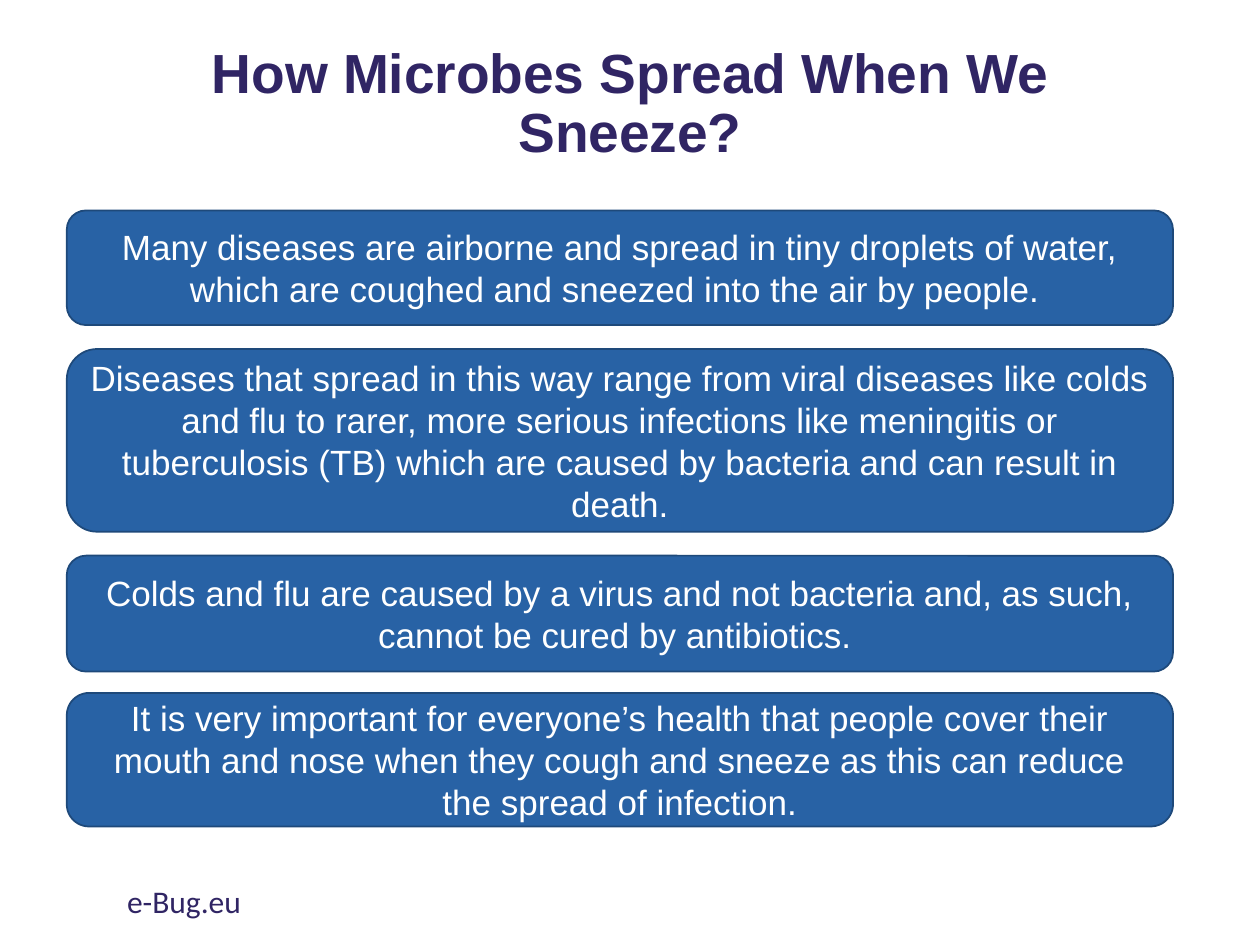
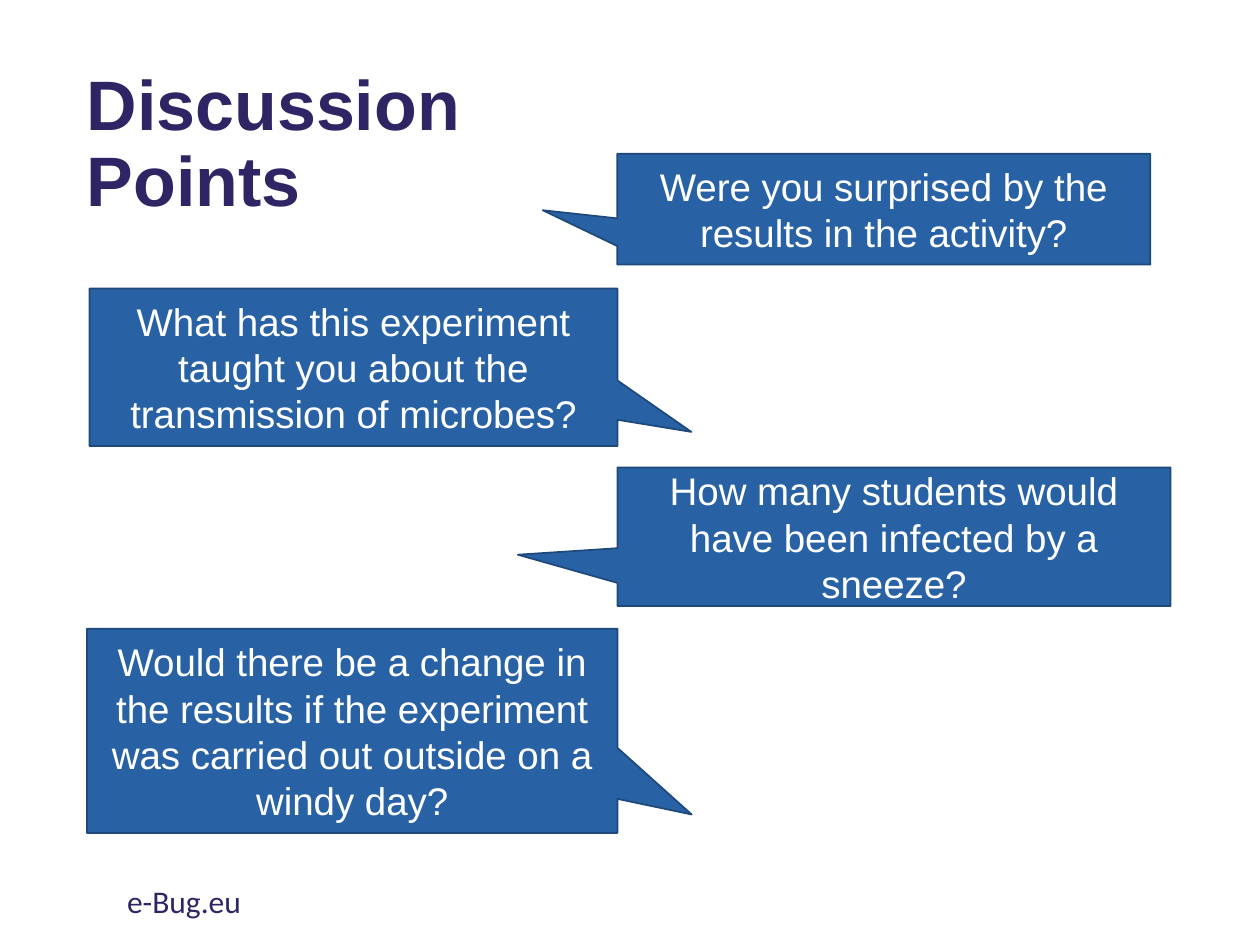
from pptx import Presentation
from pptx.dml.color import RGBColor
from pptx.enum import shapes, text
from pptx.util import Inches, Pt

NAVY = RGBColor(0x30, 0x25, 0x64)
BLUE = RGBColor(0x28, 0x62, 0xA5)
EDGE = RGBColor(0x1E, 0x49, 0x7A)
WHITE = RGBColor(0xFF, 0xFF, 0xFF)

LEFT, CENTER = text.PP_ALIGN.LEFT, text.PP_ALIGN.CENTER
TOP, MIDDLE = text.MSO_ANCHOR.TOP, text.MSO_ANCHOR.MIDDLE

TITLE = dict(name="Arial", bold=True, color=NAVY)
BODY = dict(name="Arial", color=WHITE)
FOOTER = dict(name="Calibri", size=Pt(18), color=NAVY)


def write(sp, words, font, align=CENTER, anchor=MIDDLE, spacing=1.0):
    tf = sp.text_frame
    tf.word_wrap = True
    tf.vertical_anchor = anchor
    p = tf.paragraphs[0]
    p.alignment = align
    p.line_spacing = spacing
    r = p.add_run()
    r.text = words
    for key, value in font.items():
        if key == "color":
            r.font.color.rgb = value
        else:
            setattr(r.font, key, value)


def add_panel(s, kind, box, words, size):
    """Add a blue outlined shape with centred white text."""
    sp = s.shapes.add_shape(kind, *map(Inches, box))
    sp.shadow.inherit = False
    sp.fill.solid()
    sp.fill.fore_color.rgb = BLUE
    sp.line.color.rgb = EDGE
    sp.line.width = Pt(1)
    write(sp, words, BODY | dict(size=Pt(size)))
    return sp


prs = Presentation()
prs.slide_width, prs.slide_height = Inches(10), Inches(7.5)

# Titles and footers
titles = [
    ("How Microbes Spread When We Sneeze?", (0.69, 0.38, 8.62, 0.91), 31.5, CENTER),
    ("Discussion Points", (0.59, 0.43, 4.23, 1.45), 40, LEFT),
]
slides = []
for words, box, size, align in titles:
    s = prs.slides.add_slide(prs.slide_layouts[6])
    title = s.shapes.add_textbox(*map(Inches, box))
    write(title, words, TITLE | dict(size=Pt(size)), align, spacing=0.9)
    footer = s.shapes.add_textbox(Inches(0.91), Inches(6.95), Inches(3.38), Inches(0.4))
    write(footer, "e-Bug.eu", FOOTER, LEFT, TOP)
    slides.append(s)
sneeze, discussion = slides

# Facts: top, height, words
facts = [
    (1.67, 0.91, "Many diseases are airborne and spread in tiny droplets of water, "
                 "which are coughed and sneezed into the air by people. "),
    (2.77, 1.45, "Diseases that spread in this way range from viral diseases like colds "
                 "and flu to rarer, more serious infections like meningitis or "
                 "tuberculosis (TB) which are caused by bacteria and can result in death."),
    (4.41, 0.92, "Colds and flu are caused by a virus and not bacteria and, as such, "
                 "cannot be cured by antibiotics. "),
    (5.5, 1.06, "It is very important for everyone’s health that people cover their "
                "mouth and nose when they cough and sneeze as this can reduce "
                "the spread of infection."),
]
for top, height, words in facts:
    add_panel(sneeze, shapes.MSO_SHAPE.ROUNDED_RECTANGLE,
              (0.53, top, 8.78, height), words, 20)

# Questions: box, pointer tip relative to the box centre, words
questions = [
    ((4.9, 1.22, 4.23, 0.88), (-0.64, 0.01),
     "Were you surprised by the results in the activity?"),
    ((0.71, 2.29, 4.19, 1.25), (0.64, 0.41),
     "What has this experiment taught you about the transmission of microbes?"),
    ((4.9, 3.71, 4.39, 1.1), (-0.68, 0.13),
     "How many students would have been infected by a sneeze?"),
    ((0.69, 4.99, 4.21, 1.62), (0.64, 0.41),
     "Would there be a change in the results if the experiment "
     "was carried out outside on a windy day?"),
]
for box, tip, words in questions:
    callout = add_panel(discussion, shapes.MSO_SHAPE.RECTANGULAR_CALLOUT, box, words, 22)
    callout.adjustments[0], callout.adjustments[1] = tip

prs.save("out.pptx")
